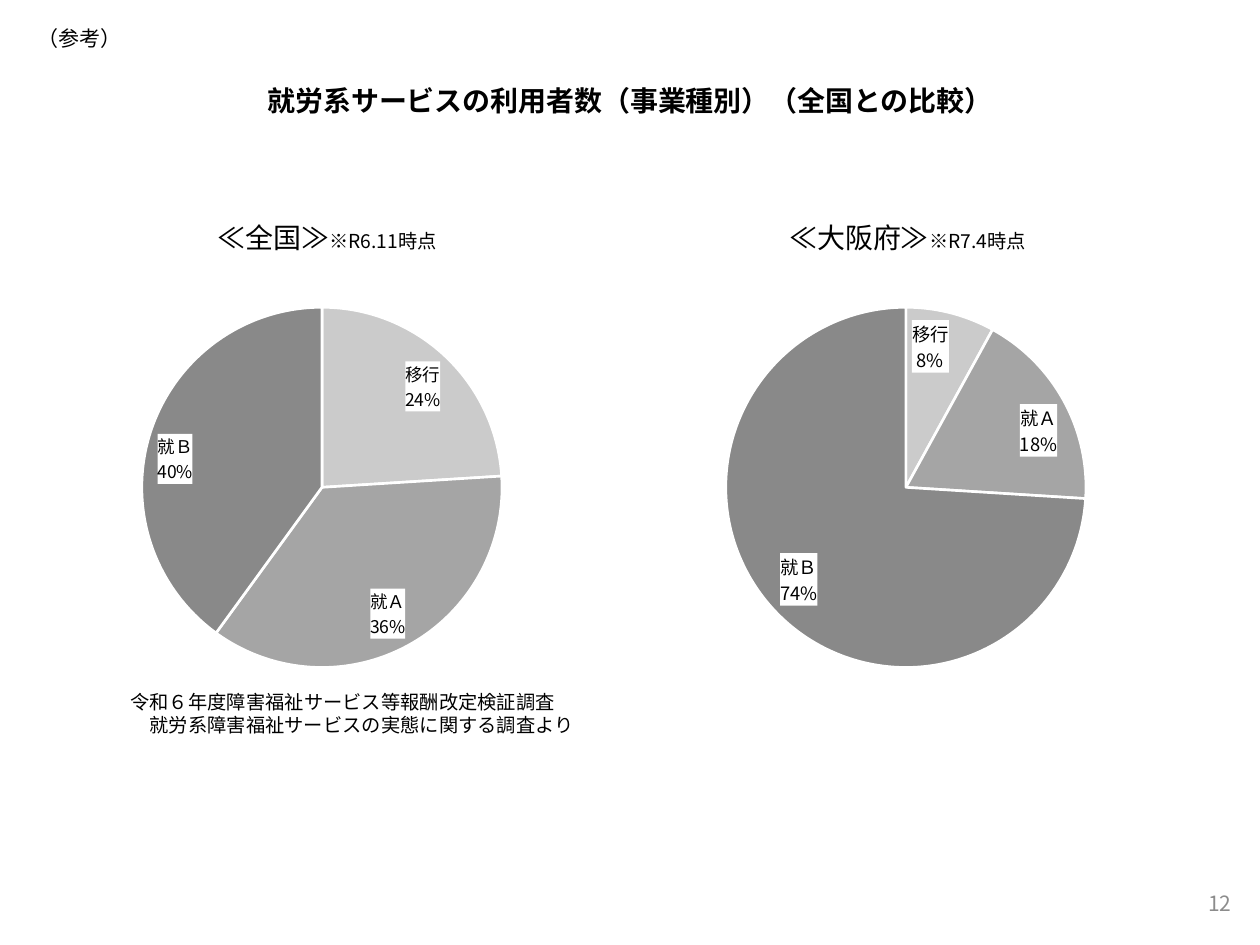
from lxml.etree import SubElement
from pptx import Presentation
from pptx.chart.data import CategoryChartData
from pptx.dml.color import RGBColor as RGB
from pptx.enum.chart import XL_CHART_TYPE as CT, XL_LABEL_POSITION as LP
from pptx.enum.text import MSO_ANCHOR as MA, MSO_AUTO_SIZE as AS, PP_ALIGN as PA
from pptx.oxml import parse_xml
from pptx.oxml.ns import nsdecls, qn
from pptx.util import Emu, Pt

PX = 914400 // 126
FONT = "Noto Sans CJK JP"
COLORS = {"text": "000000", "page": "8C8C8C", "white": "FFFFFF",
          "移行": "CBCBCB", "就Ａ": "A5A5A5", "就Ｂ": "898989"}


def px(*values):
    """Turn pixel lengths into EMU."""
    return [Emu(v * PX) for v in values]


def color(name):
    """Look up a colour by name."""
    return RGB.from_string(COLORS[name])


def write(sp, lines, align=PA.LEFT, fill="text", bold=False):
    """Fill a shape with paragraphs given as lists of (text, size) runs."""
    tf = sp.text_frame
    for key, value in {"word_wrap": True, "auto_size": AS.NONE,
                       "vertical_anchor": MA.MIDDLE}.items():
        setattr(tf, key, value)
    for i, runs in enumerate(lines):
        p = tf.add_paragraph() if i else tf.paragraphs[0]
        p.alignment = align
        for text, size in runs:
            r = p.add_run()
            r.text = text
            for key, value in {"name": FONT, "size": Pt(size), "bold": bold}.items():
                setattr(r.font, key, value)
            r.font.color.rgb = color(fill)
            SubElement(r.font._element, qn("a:ea")).set("typeface", FONT)
    return tf


def add_text(slide, box, lines, **style):
    """Add a text box at a pixel box."""
    return write(slide.shapes.add_textbox(*px(*box)), lines, **style)


def add_title(slide, box, text):
    """Place and format the title placeholder."""
    sp = slide.shapes.title
    sp.left, sp.top, sp.width, sp.height = px(*box)
    write(sp, [[(text, 16)]], align=PA.CENTER, bold=True)


def format_labels(plot, size):
    """Show category and percentage on white label boxes."""
    plot.has_data_labels = True
    labels = plot.data_labels
    for key, value in {"show_category_name": True, "show_percentage": True,
                       "show_value": False, "number_format": "0%",
                       "number_format_is_linked": False,
                       "position": LP.INSIDE_END}.items():
        setattr(labels, key, value)
    for key, value in {"name": FONT, "size": Pt(size)}.items():
        setattr(labels.font, key, value)
    labels.font.color.rgb = color("text")
    el = labels._element
    el.find(qn("c:numFmt")).addnext(parse_xml(
        f'<c:spPr {nsdecls("c", "a")}><a:solidFill><a:srgbClr val="{COLORS["white"]}"/>'
        '</a:solidFill></c:spPr>'))
    el.find(qn("c:showBubbleSize")).addnext(parse_xml(
        f'<c:separator {nsdecls("c")}>\n</c:separator>'))


def add_pie(slide, box, values, size):
    """Add a pie of the three service types."""
    names = ["移行", "就Ａ", "就Ｂ"]
    data = CategoryChartData()
    data.categories = names
    data.add_series("Series 1", values)
    chart = slide.shapes.add_chart(CT.PIE, *px(*box), data).chart
    chart.has_title = chart.has_legend = False
    chart.font.name, chart.font.size = FONT, Pt(10)
    plot = chart.plots[0]
    plot.vary_by_categories = True
    for i, name in enumerate(names):
        fmt = plot.series[0].points[i].format
        fmt.fill.solid()
        fmt.fill.fore_color.rgb = color(name)
        fmt.line.color.rgb = color("white")
        fmt.line.width = Pt(1.5)
    format_labels(plot, size)
    area = chart._chartSpace.chart.plotArea
    for old in area.findall(qn("c:layout")):
        area.remove(old)
    sizes = {"x": 0.17, "y": 0.05, "w": 0.66, "h": 0.91}
    parts = "".join(f'<c:{k} val="{v}"/>' for k, v in sizes.items())
    area.insert(0, parse_xml(
        f'<c:layout {nsdecls("c")}><c:manualLayout><c:layoutTarget val="inner"/>'
        f'<c:xMode val="edge"/><c:yMode val="edge"/>{parts}</c:manualLayout></c:layout>'))


def add_region(slide, box, inset, name, date, values, size):
    """Add a region heading with its pie below."""
    x, y, w, h = box
    add_text(slide, (x + inset, y, 308, 47), [[(name, 16), (date, 11)]])
    add_pie(slide, (x, y + 73, w, h - 73), values, size)


def add_source(slide, box):
    """Add the two-line survey reference."""
    lines = ["令和６年度障害福祉サービス等報酬改定検証調査",
             "就労系障害福祉サービスの実態に関する調査より"]
    tf = add_text(slide, box, [[(line, 11)] for line in lines])
    for p in tf.paragraphs:
        p.line_spacing = Pt(13)
    tf.paragraphs[1]._p.get_or_add_pPr().set("marL", str(Pt(11)))


def main():
    """Build the slide."""
    prs = Presentation()
    prs.slide_width, prs.slide_height = px(1260, 945)
    slide = prs.slides.add_slide(prs.slide_layouts[5])
    add_title(slide, (202, 77, 857, 47), "就労系サービスの利用者数（事業種別）（全国との比較）")
    add_text(slide, (25, 19, 132, 38), [[("（参考）", 12)]])
    add_region(slide, (49, 214, 546, 470), 156, "≪全国≫", "※R6.11時点", (24, 36, 40), 10)
    add_region(slide, (633, 214, 546, 470), 144, "≪大阪府≫", "※R7.4時点", (8, 18, 74), 10.5)
    add_source(slide, (118, 684, 476, 59))
    add_text(slide, (960, 878, 284, 50), [[("12", 12)]], align=PA.RIGHT, fill="page")
    prs.save("out.pptx")


if __name__ == "__main__":
    main()
